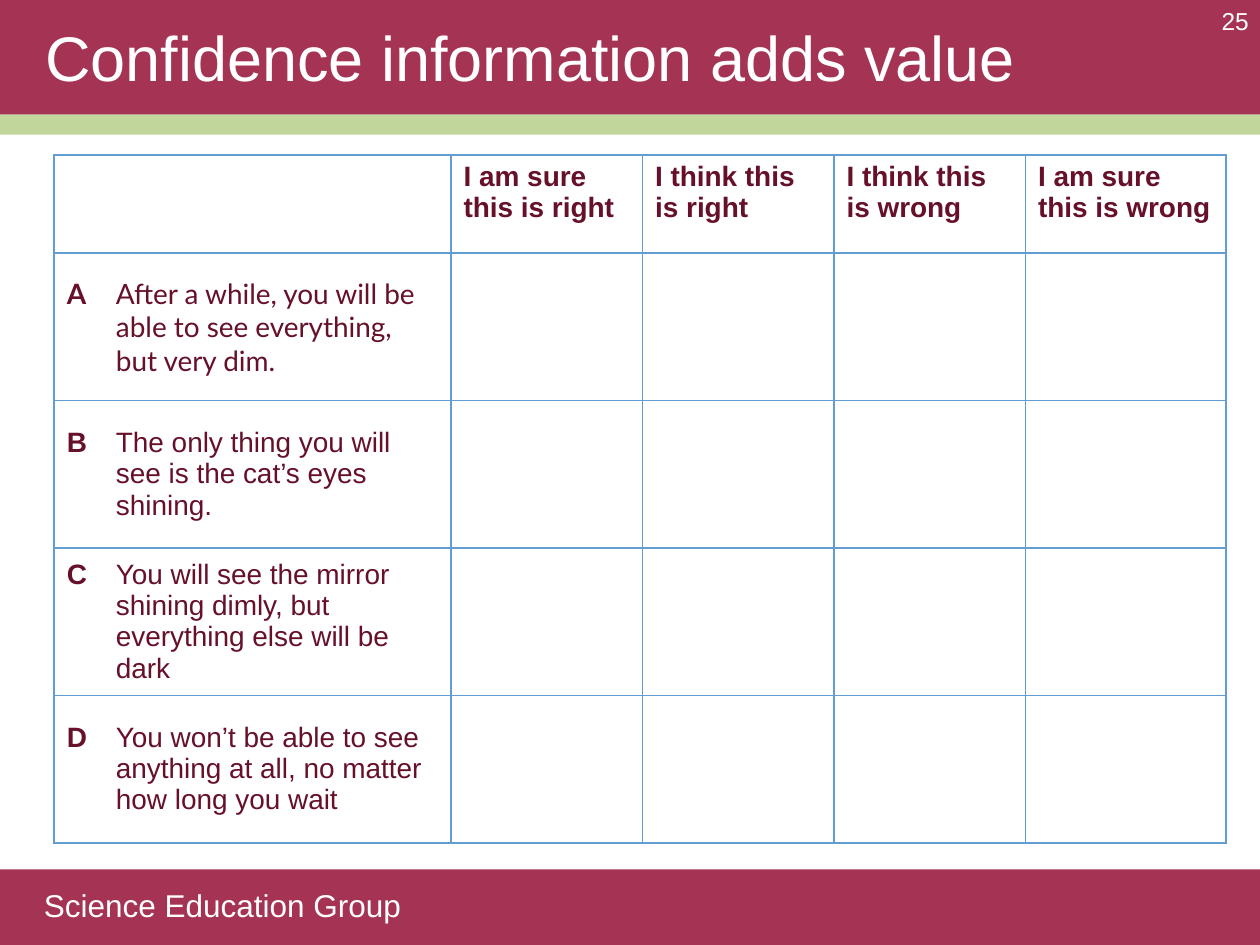
from lxml.etree import SubElement
from pptx import Presentation
from pptx.dml.color import RGBColor
from pptx.enum.shapes import MSO_SHAPE
from pptx.enum.text import MSO_ANCHOR, MSO_AUTO_SIZE, PP_ALIGN
from pptx.oxml.ns import qn
from pptx.util import Inches, Pt

HEADERS = ["I am sure this is right", "I think this is right",
           "I think this is wrong", "I am sure this is wrong"]
ANSWERS = [
    ("A", "After a while, you will be able to see everything, but very dim.", "Lato"),
    ("B", "The only thing you will see is the cat’s eyes shining.", "Arial"),
    ("C", "You will see the mirror shining dimly, but everything else will be dark", "Arial"),
    ("D", "You won’t be able to see anything at all, no matter how long you wait", "Arial"),
]
COL_WIDTHS = [3.15, 1.52, 1.52, 1.52, 1.59]
ROW_HEIGHTS = [0.78] + [1.17] * len(ANSWERS)


def rgb(value):
    return RGBColor.from_string(value)


def add_text(p, text, size=16, color="661029", font="Arial", bold=False):
    r = p.add_run()
    r.text = text
    r.font.size = Pt(size)
    r.font.name = font
    r.font.bold = bold
    r.font.color.rgb = rgb(color)
    return r


class Deck:
    band = "A53354"
    accent = "C0D69A"
    light = "FFFFFF"
    border = "629DD1"

    def __init__(self):
        self.prs = Presentation()
        self.prs.slide_width = Inches(10)
        self.prs.slide_height = Inches(7.5)
        self.s = self.prs.slides.add_slide(self.prs.slide_layouts[5])

    def bar(self, top, height, color):
        sp = self.s.shapes.add_shape(MSO_SHAPE.RECTANGLE, 0, Inches(top),
                                     self.prs.slide_width, Inches(height))
        sp.shadow.inherit = False
        sp.fill.solid()
        sp.fill.fore_color.rgb = rgb(color)
        sp.line.fill.background()

    def label(self, text, left, top, width, height, size, align=PP_ALIGN.LEFT):
        sp = self.s.shapes.add_textbox(Inches(left), Inches(top),
                                       Inches(width), Inches(height))
        sp.text_frame.word_wrap = True
        p = sp.text_frame.paragraphs[0]
        p.alignment = align
        add_text(p, text, size=size, color=self.light)

    def title(self, text, left, top, width, height):
        sp = self.s.shapes.title
        sp.left, sp.top = Inches(left), Inches(top)
        sp.width, sp.height = Inches(width), Inches(height)
        tf = sp.text_frame
        tf.auto_size = MSO_AUTO_SIZE.NONE
        tf.vertical_anchor = MSO_ANCHOR.MIDDLE
        tf.margin_left = Inches(0.24)
        p = tf.paragraphs[0]
        p.alignment = PP_ALIGN.LEFT
        add_text(p, text, size=36, color=self.light)
        self.s.shapes._spTree.append(sp._element)

    def style_cell(self, cell):
        tcPr = cell._tc.get_or_add_tcPr()
        for side in ("lnL", "lnR", "lnT", "lnB"):
            ln = SubElement(tcPr, qn(f"a:{side}"), w=str(Pt(1)))
            fill = SubElement(ln, qn("a:solidFill"))
            SubElement(fill, qn("a:srgbClr"), val=self.border)
        cell.fill.background()

    def answer(self, cell, letter, text, font):
        cell.vertical_anchor = MSO_ANCHOR.MIDDLE
        p = cell.text_frame.paragraphs[0]
        pPr = p._p.get_or_add_pPr()
        pPr.set("marL", str(Inches(0.39)))
        pPr.set("indent", str(-Inches(0.39)))
        add_text(p, f"{letter}\t", font=font, bold=True)
        add_text(p, text, font=font)

    def table(self, left, top):
        frame = self.s.shapes.add_table(
            len(ROW_HEIGHTS), len(COL_WIDTHS), Inches(left), Inches(top),
            Inches(sum(COL_WIDTHS)), Inches(sum(ROW_HEIGHTS)))
        tbl = frame.table
        tbl.first_row = tbl.horz_banding = False
        for col, width in zip(tbl.columns, COL_WIDTHS):
            col.width = Inches(width)
        for row, height in zip(tbl.rows, ROW_HEIGHTS):
            row.height = Inches(height)
        for cell in tbl.iter_cells():
            self.style_cell(cell)
        for i, header in enumerate(HEADERS, 1):
            add_text(tbl.cell(0, i).text_frame.paragraphs[0], header, bold=True)
        for i, answer in enumerate(ANSWERS, 1):
            self.answer(tbl.cell(i, 0), *answer)


def main():
    deck = Deck()
    deck.bar(6.9, 0.6, deck.band)
    deck.bar(0, 0.91, deck.band)
    deck.bar(0.91, 0.16, deck.accent)
    deck.label("25", 9.49, 0, 0.52, 0.33, 14, PP_ALIGN.RIGHT)
    deck.label("Science Education Group", 0.25, 6.98, 3.64, 0.4, 18)
    deck.table(0.43, 1.23)
    deck.title("Confidence information adds value", 0.12, 0.13, 9.21, 0.63)
    deck.prs.save("out.pptx")


if __name__ == "__main__":
    main()
